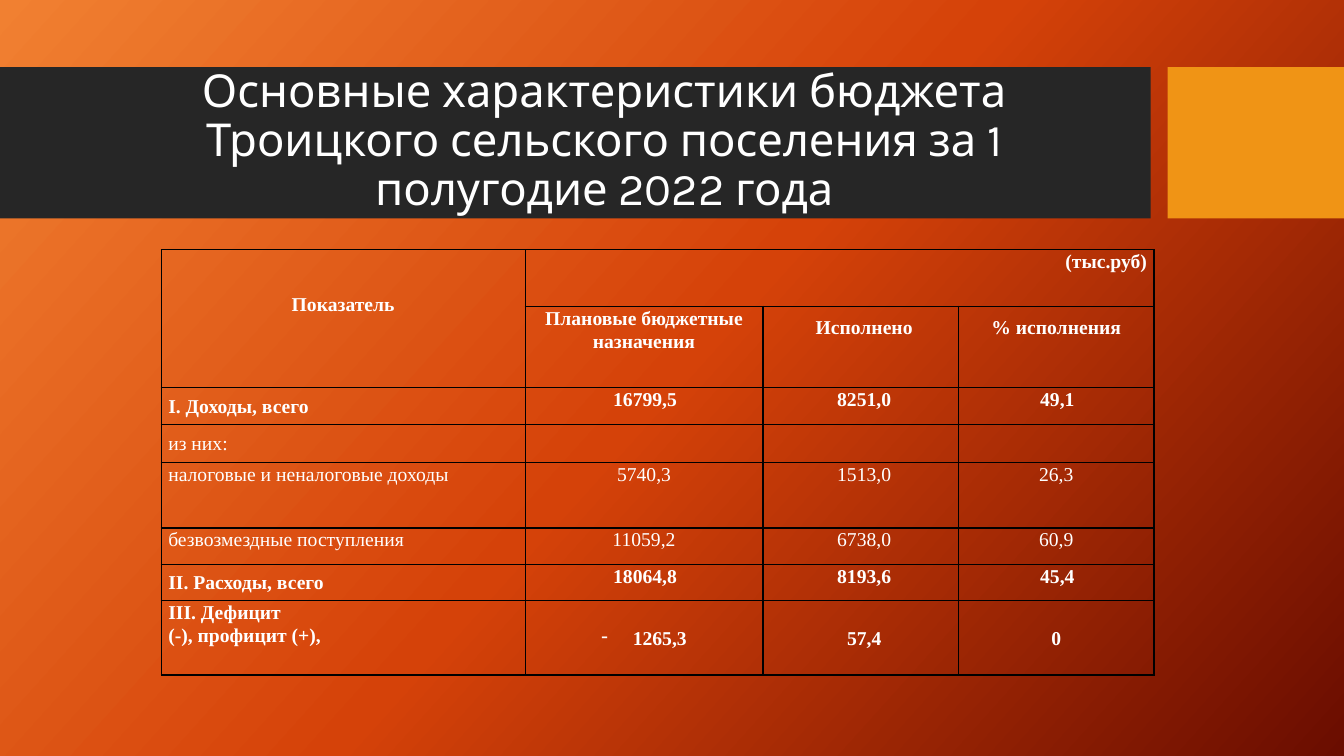
from dataclasses import dataclass

from lxml import etree
from pptx import Presentation
from pptx.dml.color import RGBColor as RGB
from pptx.enum.shapes import MSO_SHAPE as SHAPE
from pptx.enum.text import MSO_ANCHOR as ANCHOR, PP_ALIGN as ALIGN
from pptx.oxml.ns import qn
from pptx.util import Pt


@dataclass(frozen=True)
class Theme:
    gradient: tuple = ((0, "F18031"), (50, "D54209"), (100, "6A0D00"))
    angle: int = 42
    band: str = "262626"
    accent: str = "F09415"
    text: str = "FFFFFF"
    border: str = "000000"
    title_font: str = "Karla"
    table_font: str = "Times New Roman"
    title_size: float = 32.4
    table_size: float = 14


T = Theme()
L, C, R = ALIGN.LEFT, ALIGN.CENTER, ALIGN.RIGHT
COLS = (259.9, 169.9, 139.7, 139.7)
ROWS = (40.3, 58.3, 25.9, 27.4, 25.9, 20.9, 25.9, 25.9, 53.3)
SPLIT = 4  # this row and the next one share one label
SHIFT = 5  # small first-line indent of the value columns

# Row number: label, three values, bold
BODY = {
    2: ("I. Доходы, всего", ("16799,5", "8251,0", "49,1"), True),
    3: ("из них:", (), False),
    4: ("налоговые и неналоговые доходы", ("5740,3", "1513,0", "26,3"), False),
    6: ("безвозмездные поступления", ("11059,2", "6738,0", "60,9"), False),
    7: ("II. Расходы, всего", ("18064,8", "8193,6", "45,4"), True),
    8: ("III. Дефицит\n(-), профицит (+),", ("1265,3", "57,4", "0"), True),
}


def add_child(parent, tag, **attrs):
    return etree.SubElement(parent, qn(tag), **attrs)


def write(tf, text, font=T.table_font, size=T.table_size, bold=False,
          align=L, spacing=1.07, indent=0, left=0, bullet=None):
    """Fill a text frame, one paragraph per line of text."""
    for i, line in enumerate(text.split("\n")):
        p = tf.paragraphs[0] if i == 0 else tf.add_paragraph()
        pPr = p._p.get_or_add_pPr()
        pPr.set("marL", str(Pt(left)))
        pPr.set("indent", str(Pt(indent)))
        if bullet:
            add_child(pPr, "a:buChar", char=bullet)
        p.alignment, p.line_spacing = align, spacing
        r = p.add_run()
        r.text = line
        r.font.name, r.font.size, r.font.bold = font, Pt(size), bold
        r.font.color.rgb = RGB.from_string(T.text)


def paint_background(slide):
    fill = slide.background.fill
    fill.gradient()
    fill.gradient_angle = 360 - T.angle
    stops = slide._element.find(".//" + qn("a:gsLst"))
    for stop in list(stops):
        stops.remove(stop)
    for pos, color in T.gradient:
        stop = add_child(stops, "a:gs", pos=str(pos * 1000))
        add_child(stop, "a:srgbClr", val=color)


def add_block(slide, x, y, w, h, color):
    sp = slide.shapes.add_shape(SHAPE.RECTANGLE, Pt(x), Pt(y), Pt(w), Pt(h))
    sp.shadow.inherit = False
    sp.fill.solid()
    sp.fill.fore_color.rgb = RGB.from_string(color)
    sp.line.fill.background()


def add_header(slide, x, y, w, h):
    """Dark band with the title, and an accent block after a gap."""
    band_w, accent_w = w - 138, 126
    add_block(slide, x, y, band_w, h, T.band)
    add_block(slide, x + w - accent_w, y, accent_w, h, T.accent)
    box = slide.shapes.add_textbox(Pt(x + 53.3), Pt(y + 10.8),
                                   Pt(756.7), Pt(85))
    tf = box.text_frame
    tf.word_wrap, tf.vertical_anchor = True, ANCHOR.MIDDLE
    write(tf, "Основные характеристики бюджета Троицкого сельского "
          "поселения за 1 полугодие 2022 года",
          font=T.title_font, size=T.title_size, align=C, spacing=0.9)


def style_cell(cell, hidden=""):
    """Black 1 pt edges except the hidden one, no fill, narrow margins."""
    cell.margin_left = cell.margin_right = Pt(5)
    cell.margin_top = cell.margin_bottom = 0
    tcPr = cell._tc.get_or_add_tcPr()
    for edge in "LRTB":
        ln = add_child(tcPr, "a:ln" + edge, w=str(Pt(1)))
        if edge == hidden:
            add_child(ln, "a:noFill")
        else:
            add_child(add_child(ln, "a:solidFill"), "a:srgbClr", val=T.border)
    cell.fill.background()


def write_heads(table):
    table.cell(0, 0).merge(table.cell(1, 0))
    table.cell(0, 1).merge(table.cell(0, 3))
    label = table.cell(0, 0)
    label.margin_top = Pt(24)
    write(label.text_frame, "Показатель", bold=True, align=C,
          spacing=1.5, indent=-SHIFT)
    write(table.cell(0, 1).text_frame, "(тыс.руб)", bold=True, align=R)
    heads = (("Плановые бюджетные назначения", 1.07, 0),
             ("Исполнено", 1.5, SHIFT), ("% исполнения", 1.5, 0))
    for col, (text, spacing, indent) in enumerate(heads, 1):
        write(table.cell(1, col).text_frame, text, bold=True, align=C,
              spacing=spacing, indent=indent)


def write_body(table):
    table.cell(SPLIT, 0).merge(table.cell(SPLIT + 1, 0))
    last = len(ROWS) - 1
    for row, (label, values, bold) in BODY.items():
        cell = table.cell(row, 0)
        if row in (2, 3, 7):
            cell.vertical_anchor = ANCHOR.MIDDLE
        write(cell.text_frame, label, bold=bold)
        for col, value in enumerate(values, 1):
            cell = table.cell(row, col)
            fmt = {"indent": SHIFT if col == 2 else 1.5 if bold else -SHIFT}
            if row == last:
                cell.vertical_anchor = ANCHOR.MIDDLE
                if col == 1:
                    fmt = {"left": 22.5, "indent": -22.5, "bullet": "-"}
                elif col == 3:
                    fmt = {}
            write(cell.text_frame, value, bold=bold, align=C, **fmt)


def add_budget_table(slide, x, y):
    frame = slide.shapes.add_table(len(ROWS), len(COLS), Pt(x), Pt(y),
                                   Pt(sum(COLS)), Pt(sum(ROWS)))
    table = frame.table
    table.first_row = table.horz_banding = False
    for col, width in zip(table.columns, COLS):
        col.width = Pt(width)
    for i, (row, height) in enumerate(zip(table.rows, ROWS)):
        row.height = Pt(height)
        for cell in row.cells:
            style_cell(cell, {SPLIT: "B", SPLIT + 1: "T"}.get(i, ""))
    write_heads(table)
    write_body(table)
    # Empty cells keep the table type size, so rows do not grow
    for cell in table.iter_cells():
        p = cell.text_frame.paragraphs[0]
        if not p.runs:
            add_child(p._p, "a:endParaRPr", sz=str(int(T.table_size * 100)))


def main():
    prs = Presentation()
    prs.slide_width, prs.slide_height = Pt(960), Pt(540)
    slide = prs.slides.add_slide(prs.slide_layouts[6])
    paint_background(slide)
    add_header(slide, 0, 48, 960, 108)
    add_budget_table(slide, 115.2, 178.5)
    prs.save("out.pptx")


if __name__ == "__main__":
    main()
